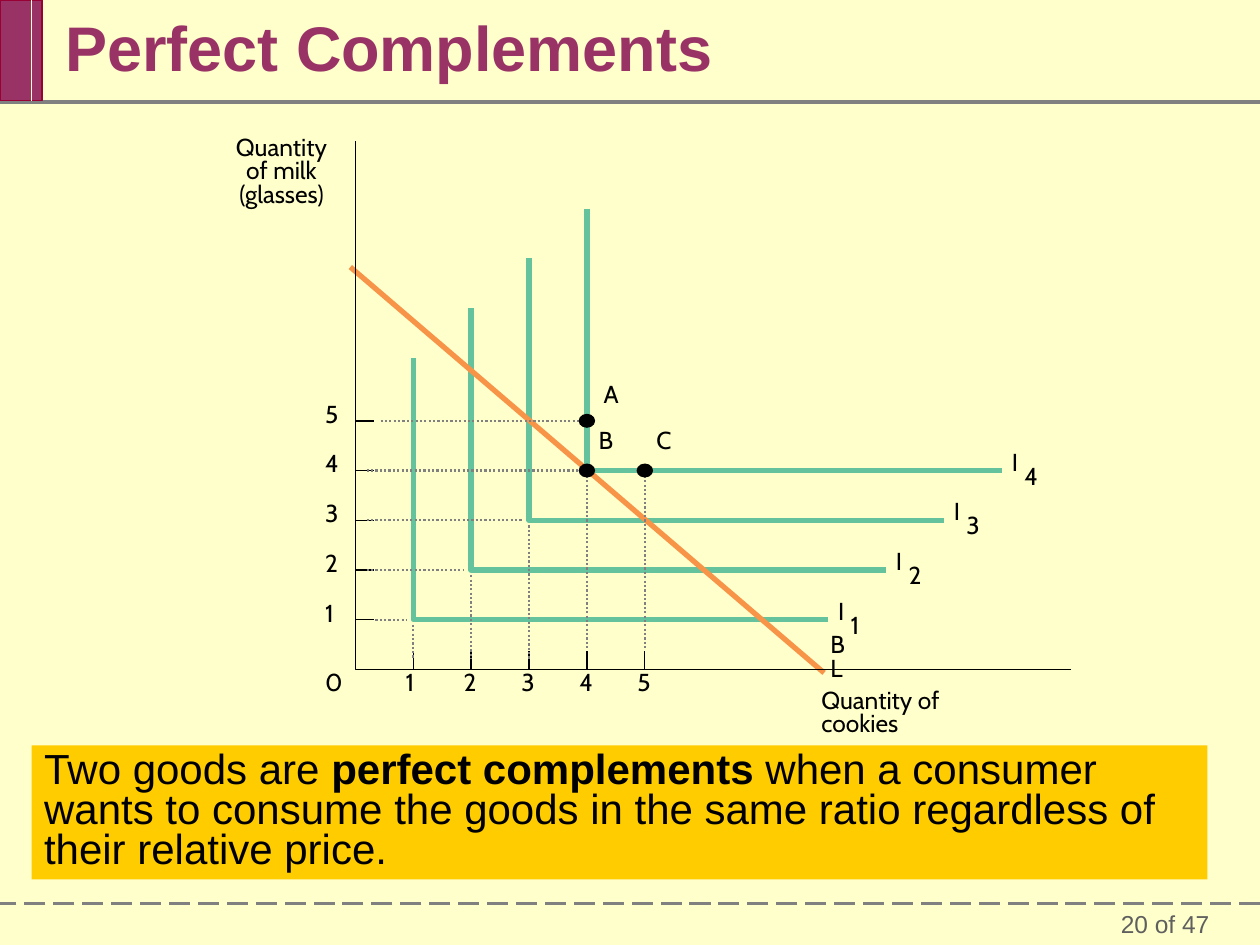
from lxml import etree
from pptx import Presentation
from pptx.dml.color import RGBColor
from pptx.enum.dml import MSO_LINE
from pptx.enum.shapes import MSO_CONNECTOR, MSO_SHAPE
from pptx.enum.text import MSO_ANCHOR, MSO_AUTO_SIZE, PP_ALIGN
from pptx.oxml.ns import qn
from pptx.util import Pt

LEFT, CENTER, RIGHT = PP_ALIGN.LEFT, PP_ALIGN.CENTER, PP_ALIGN.RIGHT
TOP, MIDDLE = MSO_ANCHOR.TOP, MSO_ANCHOR.MIDDLE
FIT_SHAPE, NO_FIT = MSO_AUTO_SIZE.SHAPE_TO_FIT_TEXT, MSO_AUTO_SIZE.NONE
DOTTED, DASHED = MSO_LINE.ROUND_DOT, MSO_LINE.LONG_DASH
STRAIGHT, OVAL, RECTANGLE = MSO_CONNECTOR.STRAIGHT, MSO_SHAPE.OVAL, MSO_SHAPE.RECTANGLE

CREAM, PLUM, GRAY, BLACK = "FFFFCC", "993366", "808080", "000000"
GREEN, ORANGE, GOLD = "64C29C", "F79448", "FFCC00"
ORIGIN_X, ORIGIN_Y = 203, 382.5
STEP_X, STEP_Y = 33.1, 28.4
CURVE_WIDTH, CURVE_HEIGHT = 237, 149.6
LABEL_LEFT = 185.8


def color(code):
    """Turn a hex string into a colour."""
    return RGBColor.from_string(code)


def cookies(count):
    """Give the horizontal place of a quantity of cookies."""
    return ORIGIN_X + STEP_X * count


def milk(count):
    """Give the vertical place of a quantity of milk."""
    return ORIGIN_Y - STEP_Y * count


def style_line(line, code, width, dash=None):
    """Set the colour, width and dash of a line."""
    line.color.rgb = color(code)
    line.width = Pt(width)
    if dash is not None:
        line.dash_style = dash


def style_paragraph(para, font, size, code, align=LEFT, spacing=1.0):
    """Set the font and spacing of a paragraph."""
    para.alignment = align
    para.line_spacing = spacing
    para.space_before = Pt(0)
    para.font.name = font
    para.font.size = Pt(size)
    para.font.color.rgb = color(code)


def add_line(page, start, end, code, width, dash=None):
    """Draw a straight line between two points."""
    line = page.shapes.add_connector(STRAIGHT, *map(Pt, start + end))
    style_line(line.line, code, width, dash)
    etree.SubElement(line._element.spPr, qn("a:effectLst"))


def add_corner(page, points, code, width):
    """Draw an open outline through the points."""
    builder = page.shapes.build_freeform(Pt(points[0][0]), Pt(points[0][1]), scale=1.0)
    builder.add_line_segments([(Pt(x), Pt(y)) for x, y in points[1:]], close=False)
    outline = builder.convert_to_shape()
    outline.fill.background()
    outline.shadow.inherit = False
    style_line(outline.line, code, width)


def add_label(page, text, left, top, width=7.2, wrap=False, align=LEFT):
    """Write a small chart label."""
    box = page.shapes.add_textbox(Pt(left), Pt(top), Pt(width), Pt(13.7))
    frame = box.text_frame
    frame.margin_left = frame.margin_right = frame.margin_top = frame.margin_bottom = Pt(0)
    frame.word_wrap = wrap
    frame.auto_size = FIT_SHAPE
    para = frame.paragraphs[0]
    para.text = text
    style_paragraph(para, "Cabin", 14, BLACK, align, 0.8)


def add_filled(page, kind, left, top, width, height, code):
    """Draw a filled preset shape without a line."""
    shape = page.shapes.add_shape(kind, Pt(left), Pt(top), Pt(width), Pt(height))
    shape.shadow.inherit = False
    shape.fill.solid()
    shape.fill.fore_color.rgb = color(code)
    shape.line.fill.background()
    return shape


def add_point(page, name, x, y, label_left, label_top):
    """Mark and name a consumption point."""
    add_filled(page, OVAL, x - 4.7, y - 4, 9.4, 8, BLACK)
    add_label(page, name, label_left, label_top, 8.3)


def place_placeholder(holder, left, top, width, height, code, anchor):
    """Move and fill a placeholder and return its first paragraph."""
    holder.left, holder.top, holder.width, holder.height = map(Pt, (left, top, width, height))
    holder.fill.solid()
    holder.fill.fore_color.rgb = color(code)
    frame = holder.text_frame
    frame.word_wrap = True
    frame.auto_size = NO_FIT
    frame.vertical_anchor = anchor
    return frame.paragraphs[0]


def add_frame(page):
    """Draw the accent bar, the rules and the page number."""
    add_line(page, (720, 516.2), (0, 516.2), GRAY, 1.5, DASHED)
    add_line(page, (720, 58.3), (0, 58.3), GRAY, 2)
    bar = add_filled(page, RECTANGLE, 0, 0, 24, 57.6, PLUM)
    style_line(bar.line, "990033", 0.75)
    add_line(page, (18, 0), (18, 57.6), CREAM, 0.75)
    box = page.shapes.add_textbox(Pt(612), Pt(516.2), Pt(108), Pt(23.8))
    box.text_frame.word_wrap = True
    box.text_frame.vertical_anchor = MIDDLE
    para = box.text_frame.paragraphs[0]
    para.text = "20 of 47"
    style_paragraph(para, "Arial", 14, "5F5F5F", RIGHT)
    box.text_frame.margin_right = Pt(28.8)


def add_texts(page):
    """Fill the title and the definition."""
    title, body = page.placeholders
    para = place_placeholder(title, 30, 5.8, 618, 48, CREAM, MIDDLE)
    para.text = "Perfect Complements"
    style_paragraph(para, "Arial", 36, PLUM, spacing=0.85)
    para.font.bold = True

    para = place_placeholder(body, 18, 426, 672, 76.5, GOLD, TOP)
    properties = para._p.get_or_add_pPr()
    properties.set("marL", "0")
    properties.set("indent", "0")
    etree.SubElement(properties, qn("a:buNone"))
    for text, bold in (
        ("Two goods are ", False),
        ("perfect complements ", True),
        ("when a consumer wants to consume the goods in the same ratio "
         "regardless of their relative price.", False),
    ):
        span = para.add_run()
        span.text = text
        span.font.bold = bold
    style_paragraph(para, "Arial", 24, BLACK, spacing=0.8)


def add_curve(page, level):
    """Draw and name one indifference curve."""
    x, y = cookies(level), milk(level)
    end = x + CURVE_WIDTH
    add_corner(page, [(x, y - CURVE_HEIGHT), (x, y), (end, y)], GREEN, 3)
    add_label(page, "I", end + 5.8, y - 10.4, 3.6)
    add_label(page, str(level), end + 13, y - 2.5)


def add_axes(page):
    """Draw the axes with ticks, numbers and names."""
    for count in range(1, 6):
        x, y = cookies(count), milk(count)
        add_line(page, (x, 372.2), (x, ORIGIN_Y), BLACK, 0.75)
        add_line(page, (ORIGIN_X, y), (ORIGIN_X + 11, y), BLACK, 0.75)
        add_label(page, str(count), x - 4.3, 384.5)
        add_label(page, str(count), LABEL_LEFT, y - 9.4)
    add_label(page, "0", LABEL_LEFT, 384.5)
    add_corner(page, [(612, ORIGIN_Y), (ORIGIN_X, ORIGIN_Y), (ORIGIN_X, 80.6)], BLACK, 0.75)
    add_label(page, "Quantity of milk (glasses)", 127.4, 78.5, 67, True, CENTER)
    add_label(page, "Quantity of cookies", 469.4, 394.6, 80, True)


def add_guides(page):
    """Draw the dotted lines from the bundles to the axes."""
    for row, start, column in ((1, 214.5, 1), (2, 209.5, 2), (3, 209.5, 3), (4, 209.5, 4), (5, 217.5, 4)):
        add_line(page, (start, milk(row)), (cookies(column) - 4, milk(row)), GRAY, 1.25, DOTTED)
    for column, row, end in ((1, 1, 376.5), (2, 2, 376.5), (3, 3, 376.5), (4, 4, 370.5), (5, 4, 370.5)):
        add_line(page, (cookies(column), milk(row) + 3), (cookies(column), end), GRAY, 1.25, DOTTED)


def main():
    """Build the slide and save it."""
    deck = Presentation()
    deck.slide_width, deck.slide_height = Pt(720), Pt(540)
    page = deck.slides.add_slide(deck.slide_layouts[1])
    page.background.fill.solid()
    page.background.fill.fore_color.rgb = color(CREAM)
    add_frame(page)
    add_texts(page)
    for level in range(1, 5):
        add_curve(page, level)
    add_line(page, (200.2, 152.6), (470.9, 384.5), ORANGE, 3)
    add_label(page, "BL", 474.5, 362.9, 10, True)
    add_axes(page)
    add_guides(page)
    add_point(page, "A", cookies(4), milk(5), 344.9, 219.6)
    add_point(page, "B", cookies(4), milk(4), 342, 246.2)
    add_point(page, "C", cookies(5), milk(4), 375.1, 246.2)
    deck.save("out.pptx")


if __name__ == "__main__":
    main()
